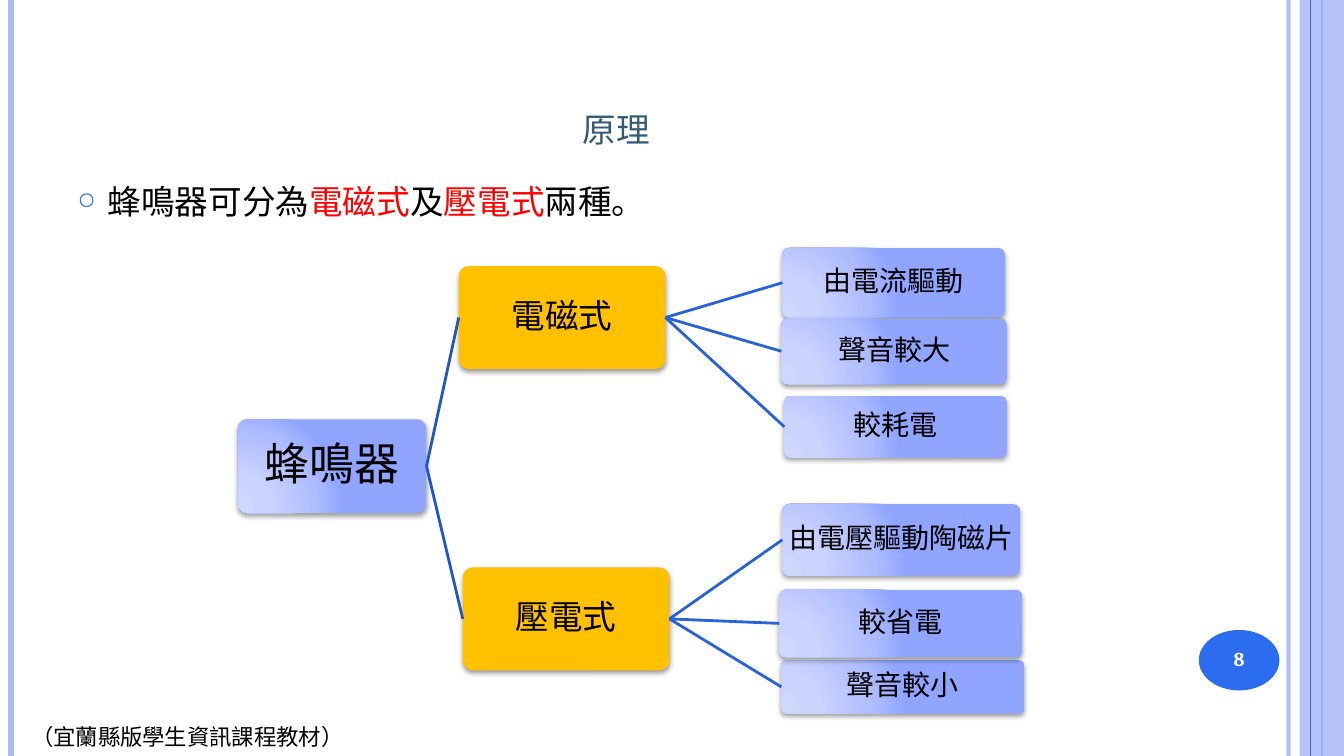
from lxml.etree import SubElement
from pptx import Presentation
from pptx.dml.color import RGBColor
from pptx.enum.shapes import MSO_CONNECTOR, MSO_SHAPE
from pptx.enum.text import MSO_ANCHOR, PP_ALIGN
from pptx.oxml import parse_xml
from pptx.oxml.ns import nsdecls, qn
from pptx.util import Inches, Pt

FONT = "Cambria"
COLORS = {
    "rail": "ADBAF6", "blue": "2C6DF0", "title": "335B74", "black": "000000",
    "red": "FF0000", "white": "FFFFFF", "gold": "FFC000",
    "trunk": "2357C0", "twig": "2863DA",
}
STOPS = [(0, "CFD7FF"), (30, "CBD3FF"), (75, "AEBCFF"), (100, "8FA5FF")]

ROOT = ("蜂鳴器", (2.36, 4.16, 1.87, 0.93))
KINDS = [
    ("電磁式", (4.55, 2.64, 2.05, 1.02), [
        ("由電流驅動", (7.76, 2.46, 2.21, 0.69)),
        ("聲音較大", (7.75, 3.16, 2.24, 0.65)),
        ("較耗電", (7.78, 3.93, 2.21, 0.61)),
    ]),
    ("壓電式", (4.59, 5.63, 2.05, 1.02), [
        ("由電壓驅動陶磁片", (7.76, 5, 2.36, 0.71)),
        ("聲音較小", (7.75, 6.55, 2.41, 0.53)),
        ("較省電", (7.73, 5.85, 2.41, 0.67)),
    ]),
]


def color(name):
    return RGBColor.from_string(COLORS[name])


def fade(shape, percent):
    """Set the opacity of the shape's only colour."""
    tone = next(shape._element.spPr.iter(qn("a:srgbClr")))
    SubElement(tone, qn("a:alpha"), val=str(percent * 1000))


def add_run(para, text, size, tone="black", bold=False):
    run = para.add_run()
    run.text = text
    font = run.font
    font.name, font.size, font.bold = FONT, Pt(size), bold
    font.color.rgb = color(tone)
    return run


def add_text(slide, box, anchor=MSO_ANCHOR.TOP, wrap=True):
    """Add an empty text box and return its first paragraph."""
    frame = slide.shapes.add_textbox(*map(Inches, box)).text_frame
    frame.word_wrap = wrap
    frame.vertical_anchor = anchor
    return frame.paragraphs[0]


def add_shape(slide, kind, box, fill=None):
    shape = slide.shapes.add_shape(kind, *map(Inches, box))
    shape.shadow.inherit = False
    shape.line.fill.background()
    if fill:
        shape.fill.solid()
        shape.fill.fore_color.rgb = color(fill)
    return shape


def label(shape, text, size, tone="black", bold=False, inset=0.03):
    frame = shape.text_frame
    frame.margin_left = frame.margin_right = Inches(inset)
    frame.margin_top = frame.margin_bottom = Inches(inset)
    frame.vertical_anchor = MSO_ANCHOR.MIDDLE
    para = frame.paragraphs[0]
    para.alignment = PP_ALIGN.CENTER
    para.line_spacing = 0.9
    add_run(para, text, size, tone, bold)


def add_line(slide, tone, width, x=0):
    """Add a line running down the slide at x."""
    line = slide.shapes.add_connector(
        MSO_CONNECTOR.STRAIGHT, Inches(x), 0, Inches(x), Inches(7.5))
    line.line.color.rgb = color(tone)
    line.line.width = Pt(width)
    SubElement(line._element.spPr, qn("a:effectLst"))
    return line


def join(slide, left, right, tone):
    line = add_line(slide, tone, 2)
    line.begin_connect(left, 3)
    line.end_connect(right, 1)


def shade(shape):
    """Fill the shape with the radial blue gradient."""
    stops = "".join(
        f'<a:gs pos="{at * 1000}"><a:srgbClr val="{tone}"/></a:gs>'
        for at, tone in STOPS)
    grad = parse_xml(
        f'<a:gradFill {nsdecls("a")} rotWithShape="1"><a:gsLst>{stops}</a:gsLst>'
        '<a:path path="circle"><a:fillToRect l="5000" t="100000" r="120000"'
        ' b="10000"/></a:path></a:gradFill>')
    shape._element.spPr.find(qn("a:prstGeom")).addnext(grad)


def add_node(slide, text, box, size, fill=None):
    node = add_shape(slide, MSO_SHAPE.ROUNDED_RECTANGLE, box, fill)
    node.adjustments[0] = 0.1
    if not fill:
        shade(node)
    effects = node._element.spPr.find(qn("a:effectLst"))
    effects.append(parse_xml(
        f'<a:outerShdw {nsdecls("a")} blurRad="{Pt(4)}" dist="{Pt(2)}"'
        ' dir="5400000" rotWithShape="0"><a:srgbClr val="000000">'
        '<a:alpha val="40000"/></a:srgbClr></a:outerShdw>'))
    label(node, text, size)
    return node


def add_frame(slide):
    """Add the side rails, page number and footer."""
    fade(add_line(slide, "rail", 3, 12.78), 93)
    add_line(slide, "rail", 4.5, 0.11)
    add_line(slide, "blue", 1.5, 13.11)
    band = add_shape(slide, MSO_SHAPE.RECTANGLE, (12.89, 0, 0.44, 7.5), "rail")
    fade(band, 87)
    add_line(slide, "blue", 0.75, 13)
    badge = add_shape(slide, MSO_SHAPE.OVAL, (11.89, 6.25, 0.8, 0.6), "blue")
    label(badge, "8", 14, "white", True)
    foot = add_text(slide, (0.21, 7.12, 3.34, 0.37), wrap=False)
    add_run(foot, "（宜蘭縣版學生資訊課程教材）", 16)


def add_title(slide):
    para = add_text(slide, (0.67, 0.79, 10.89, 0.76), MSO_ANCHOR.BOTTOM)
    para.alignment = PP_ALIGN.CENTER
    run = add_run(para, "原理", 30, "title")
    run.font._element.set("cap", "small")


def add_point(slide):
    para = add_text(slide, (0.67, 1.75, 10.89, 0.5))
    props = para._p.get_or_add_pPr()
    props.set("marL", str(Inches(0.3)))
    props.set("indent", str(Inches(-0.3)))
    tone = SubElement(props, qn("a:buClr"))
    SubElement(tone, qn("a:srgbClr"), val=COLORS["blue"])
    SubElement(props, qn("a:buSzPct"), val="70000")
    SubElement(props, qn("a:buChar"), char="○")
    for text, ink in [("蜂鳴器可分為", "black"), ("電磁式", "red"), ("及", "black"),
                      ("壓電式", "red"), ("兩種。", "black")]:
        add_run(para, text, 24, ink)


def add_tree(slide):
    root = add_node(slide, *ROOT, 32)
    for name, box, traits in KINDS:
        kind = add_node(slide, name, box, 24, "gold")
        join(slide, root, kind, "trunk")
        for trait, place in traits:
            leaf = add_node(slide, trait, place, 20)
            join(slide, kind, leaf, "twig")


def main():
    deck = Presentation()
    deck.slide_width, deck.slide_height = Inches(13.33), Inches(7.5)
    slide = deck.slides.add_slide(deck.slide_layouts[6])
    add_frame(slide)
    add_title(slide)
    add_point(slide)
    add_tree(slide)
    deck.save("out.pptx")


if __name__ == "__main__":
    main()
